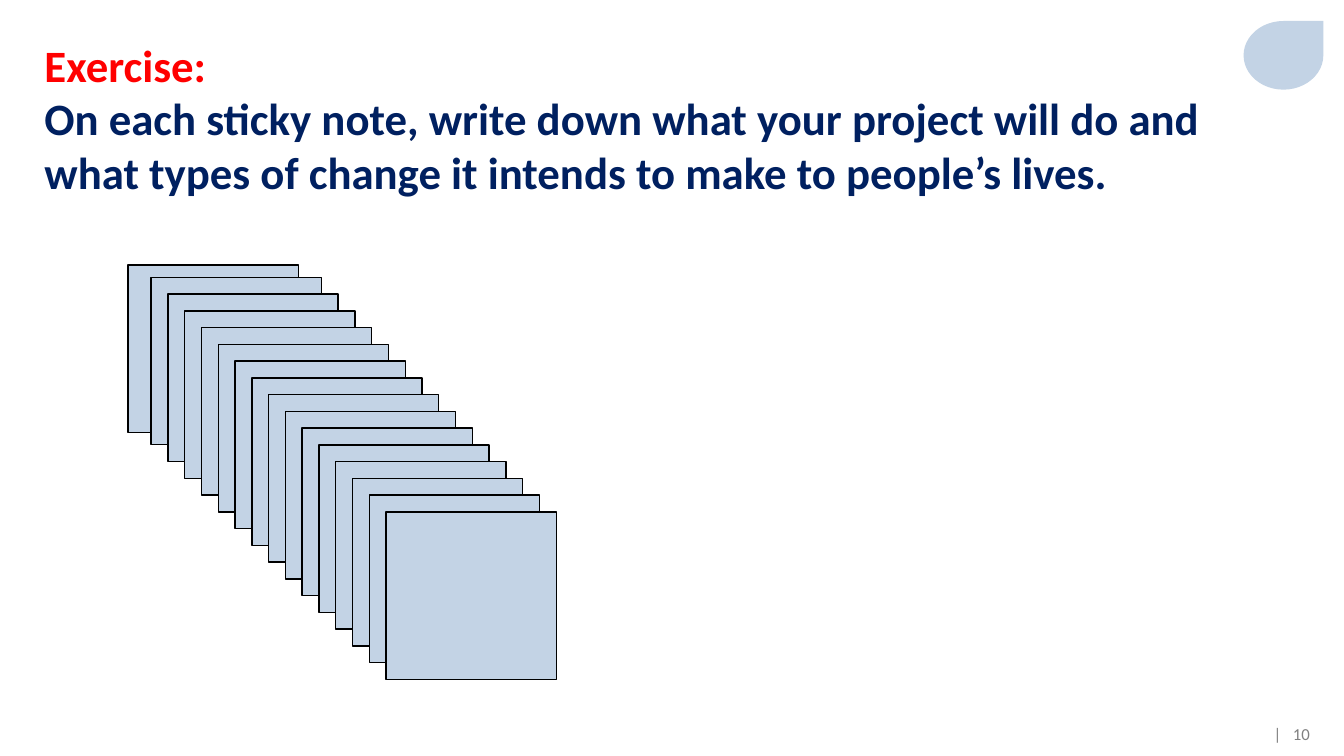
from lxml import etree
from pptx import Presentation
from pptx import util as u
from pptx.dml.color import RGBColor
from pptx.enum import shapes, text
from pptx.oxml import ns

COLOURS = {"red": "FF0000", "navy": "002060", "note": "C3D3E5",
           "outline": "000000", "grey": "808080"}
FONT = "Calibri"


def colour(name):
    return RGBColor.from_string(COLOURS[name])


def place(item, box):
    item.left, item.top, item.width, item.height = map(u.Cm, box)


def set_frame(frame, anchor, left_inset=0):
    frame.word_wrap = True
    frame.auto_size = text.MSO_AUTO_SIZE.NONE
    frame.vertical_anchor = anchor
    frame.margin_left = u.Cm(left_inset)
    frame.margin_top = frame.margin_right = frame.margin_bottom = 0


def add_text(para, words, *, size, fill, bold=False):
    span = para.add_run()
    span.text = words
    span.font.name = FONT
    span.font.size = u.Pt(size)
    span.font.bold = bold
    span.font.color.rgb = colour(fill)


def add_block(page, kind, box, line=None):
    block = page.shapes.add_shape(kind, *map(u.Cm, box))
    block.shadow.inherit = False
    block.fill.solid()
    block.fill.fore_color.rgb = colour("note")
    if line:
        block.line.color.rgb = colour(line)
        block.line.width = u.Pt(1)
    else:
        block.line.fill.background()


# Exercise heading in the title placeholder
def add_heading(page, box):
    title = page.shapes.title
    place(title, box)
    set_frame(title.text_frame, text.MSO_ANCHOR.TOP)
    para = title.text_frame.paragraphs[0]
    para.alignment = text.PP_ALIGN.LEFT
    add_text(para, "Exercise: ", size=32, fill="red", bold=True)
    para.add_line_break()
    add_text(para, "On each sticky note, write down what your project will do and "
             "what types of change it intends to make to people’s lives.",
             size=32, fill="navy", bold=True)


# Cascade of notes: the first lies a little apart, the rest at equal steps
def add_notes(page, box, count=16, note=(4.29, 4.22), first_gap=(0.58, 0.31)):
    left, top, width, height = box
    note_width, note_height = note
    step_x = (width - note_width - first_gap[0]) / (count - 2)
    step_y = (height - note_height - first_gap[1]) / (count - 2)
    places = [(left, top)]
    for index in range(count - 1):
        places.append((left + first_gap[0] + index * step_x,
                       top + first_gap[1] + index * step_y))
    for corner in places:
        add_block(page, shapes.MSO_SHAPE.RECTANGLE, (*corner, *note), line="outline")


# Page number, with a tab between the bar and the figure
def add_page_number(page, box):
    number = page.shapes.add_textbox(*map(u.Cm, box))
    set_frame(number.text_frame, text.MSO_ANCHOR.MIDDLE, left_inset=1.24)
    para = number.text_frame.paragraphs[0]
    tabs = etree.SubElement(para._p.get_or_add_pPr(), ns.qn("a:tabLst"))
    etree.SubElement(tabs, ns.qn("a:tab"), pos=str(u.Cm(0.48)), algn="l")
    add_text(para, "|\t10", size=12, fill="grey")


def main():
    deck = Presentation()
    deck.slide_width, deck.slide_height = u.Cm(33.87), u.Cm(19.05)
    page = deck.slides.add_slide(deck.slide_layouts[5])
    add_page_number(page, (30.86, 18.31, 2.16, 0.38))
    add_heading(page, (1.12, 0.94, 30.23, 2.95))
    add_notes(page, (3.23, 6.68, 10.79, 10.44))
    # Corner ornament
    add_block(page, shapes.MSO_SHAPE.TEAR, (31.34, 0.53, 2.01, 1.73))
    deck.save("out.pptx")


if __name__ == "__main__":
    main()
